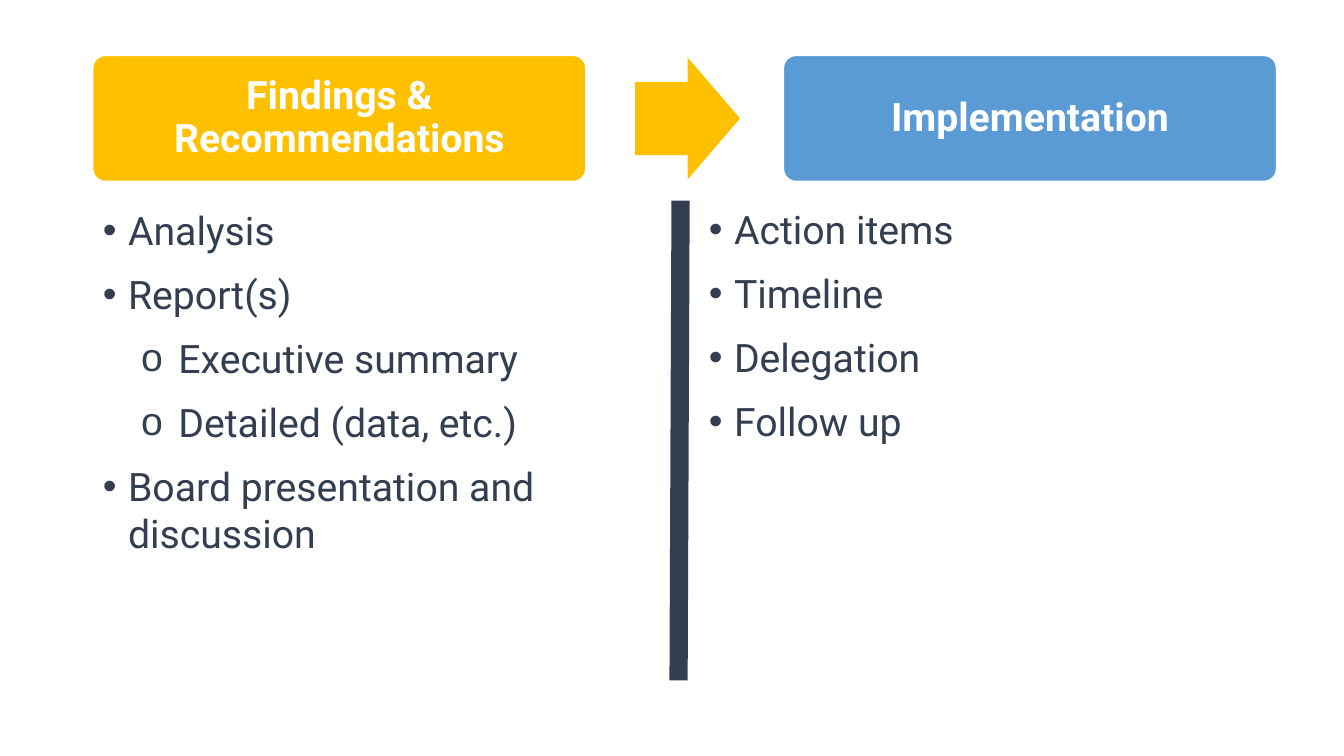
from dataclasses import dataclass

from lxml.etree import SubElement
from pptx import Presentation
from pptx.dml.color import RGBColor
from pptx.enum.shapes import MSO_CONNECTOR, MSO_SHAPE
from pptx.enum.text import MSO_ANCHOR, MSO_AUTO_SIZE, PP_ALIGN
from pptx.oxml.ns import qn
from pptx.util import Pt

EMU_PER_PX = 9144
FONT = "Roboto"
COLORS = {
    "white": "FFFFFF",
    "slate": "333F50",
    "gold": "FFC000",
    "blue": "5B9BD5",
}
BULLETS = [("•", 25, -25), ("o", 75, -37)]


@dataclass
class Item:
    text: str
    level: int = 0


@dataclass
class Stage:
    title: str
    color: str
    header_left: int
    list_left: int
    list_top: int
    items: list[Item]


STAGES = [
    Stage("Findings & Recommendations", "gold", 92, 92, 200, [
        Item("Analysis"),
        Item("Report(s)"),
        Item("Executive summary", 1),
        Item("Detailed (data, etc.)", 1),
        Item("Board presentation and discussion"),
    ]),
    Stage("Implementation", "blue", 777, 693, 199, [
        Item("Action items"),
        Item("Timeline"),
        Item("Delegation"),
        Item("Follow up"),
    ]),
]


def px(length: int) -> int:
    return length * EMU_PER_PX


def rgb(name: str) -> RGBColor:
    return RGBColor.from_string(COLORS[name])


def add_run(paragraph, text: str, color: str, bold: bool = False) -> None:
    run = paragraph.add_run()
    run.text = text
    run.font.name = FONT
    run.font.size = Pt(28)
    run.font.bold = bold
    run.font.color.rgb = rgb(color)


def add_block(slide, kind, left: int, top: int, width: int, height: int,
              color: str, adjustments: list[float]):
    shape = slide.shapes.add_shape(kind, px(left), px(top), px(width), px(height))
    shape.shadow.inherit = False
    shape.fill.solid()
    shape.fill.fore_color.rgb = rgb(color)
    shape.line.fill.background()
    for index, value in enumerate(adjustments):
        shape.adjustments[index] = value
    return shape


def add_header(slide, stage: Stage) -> None:
    shape = add_block(slide, MSO_SHAPE.ROUNDED_RECTANGLE, stage.header_left, 55,
                      489, 125, stage.color, [0.1])
    shape.line.color.rgb = rgb("white")
    shape.line.width = Pt(1)
    frame = shape.text_frame
    frame.word_wrap = True
    frame.vertical_anchor = MSO_ANCHOR.MIDDLE
    frame.margin_left = frame.margin_right = px(16)
    frame.margin_top = frame.margin_bottom = px(16)
    paragraph = frame.paragraphs[0]
    paragraph.alignment = PP_ALIGN.CENTER
    paragraph.line_spacing = 0.9
    add_run(paragraph, stage.title, "white", True)


def fill_list(placeholder, stage: Stage) -> None:
    placeholder.left, placeholder.top = px(stage.list_left), px(stage.list_top)
    placeholder.width, placeholder.height = px(567), px(476)
    frame = placeholder.text_frame
    frame.auto_size = MSO_AUTO_SIZE.NONE
    frame.word_wrap = True
    frame.vertical_anchor = MSO_ANCHOR.TOP
    for index, item in enumerate(stage.items):
        paragraph = frame.add_paragraph() if index else frame.paragraphs[0]
        paragraph.level = item.level
        paragraph.space_before = Pt(0)
        paragraph.space_after = Pt(12)
        character, margin, indent = BULLETS[item.level]
        properties = paragraph._p.get_or_add_pPr()
        properties.set("marL", str(px(margin)))
        properties.set("indent", str(px(indent)))
        SubElement(properties, qn("a:buChar")).set("char", character)
        add_run(paragraph, item.text, "slate")


def add_divider(slide) -> None:
    divider = slide.shapes.add_connector(
        MSO_CONNECTOR.STRAIGHT, px(675), px(199), px(673), px(675))
    divider.line.color.rgb = rgb("slate")
    divider.line.width = Pt(13)
    SubElement(divider._element.spPr, qn("a:effectLst"))


def main() -> None:
    presentation = Presentation()
    presentation.slide_width = px(1333)
    presentation.slide_height = px(750)
    slide = presentation.slides.add_slide(presentation.slide_layouts[3])
    title = slide.shapes.title._element
    title.getparent().remove(title)
    add_divider(slide)
    for index, stage in enumerate(STAGES, start=1):
        fill_list(slide.placeholders[index], stage)
        add_header(slide, stage)
    add_block(slide, MSO_SHAPE.RIGHT_ARROW, 630, 57, 104, 121, "gold", [0.6, 0.5])
    presentation.save("out.pptx")


if __name__ == "__main__":
    main()
